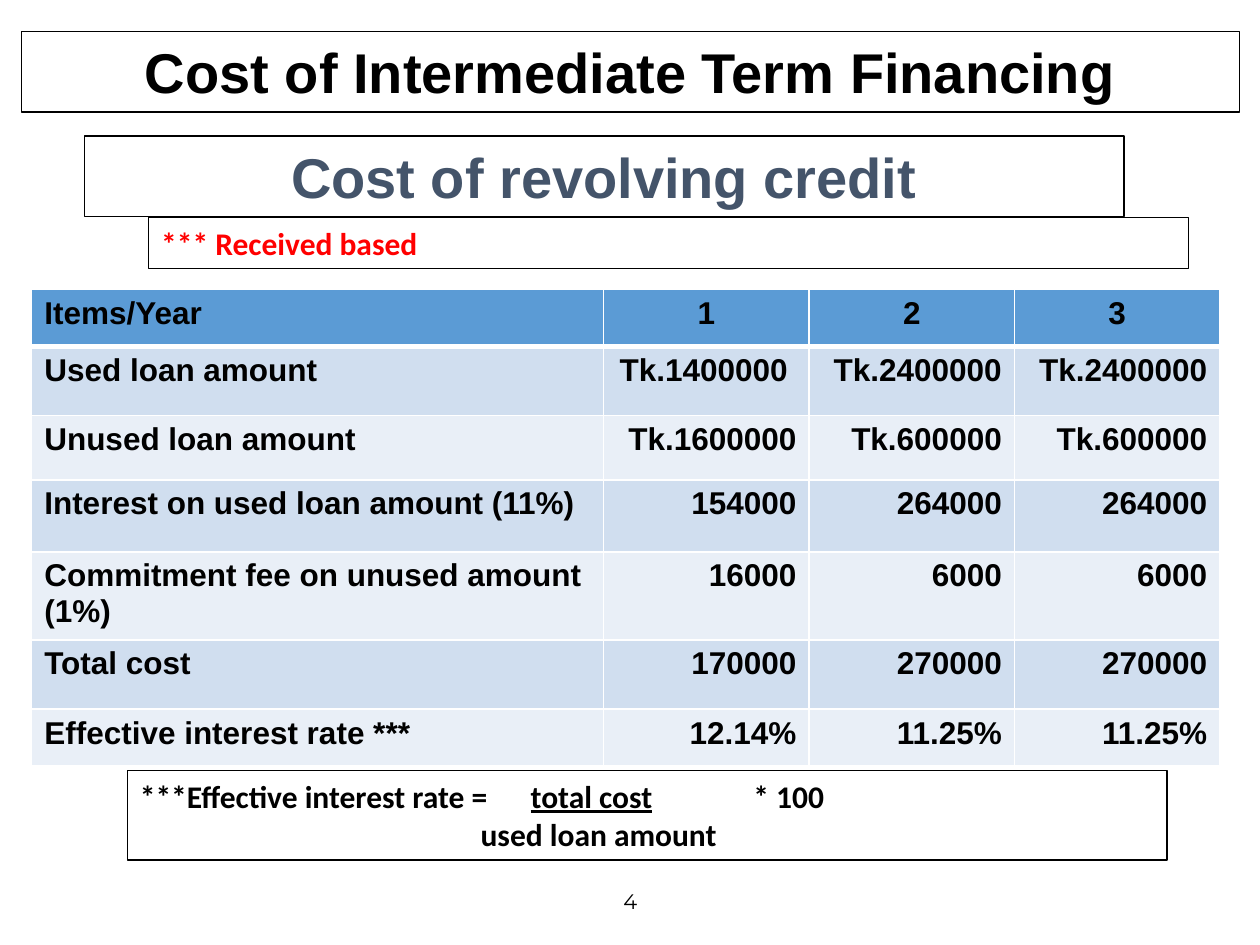
from lxml import etree
from pptx import Presentation
from pptx import util as u
from pptx.dml.color import RGBColor
from pptx.enum import shapes, text
from pptx.oxml.ns import qn

COLORS = {"ink": "000000", "slate": "44546A", "red": "FF0000", "white": "FFFFFF",
          "header": "5B9BD5", "band_dark": "D0DEEF", "band_light": "E9EFF7"}
LEFT, CENTER, RIGHT = text.PP_ALIGN.LEFT, text.PP_ALIGN.CENTER, text.PP_ALIGN.RIGHT

# Content; boxes are left, top, width, height in cm
TITLE = ("Cost of Intermediate Term Financing", (0.43, 0.63, 24.56, 1.63))
SUBTITLE = ("Cost of revolving credit", (1.7, 2.74, 20.96, 1.63))
BASIS = ("*** Received based", (3, 4.39, 20.96, 1.02))
FORMULA_BOX = (2.57, 15.54, 20.96, 1.8)
# Each line: tab stops in cm, then (text, underlined) runs
FORMULA = [
    ([7.88, 12.37], [("***Effective interest rate =\t", False),
                     ("total cost", True), ("\t* 100", False)]),
    ([6.87], [("\tused loan amount", False)]),
]
PAGE_NUMBER = ("4", (8.41, 17.65, 8.59, 1.02))

TABLE_LEFT, TABLE_TOP = 0.64, 5.84
COL_WIDTHS = [11.53, 4.14, 4.14, 4.14]
ROW_HEIGHTS = [1.14, 1.4, 1.3, 1.45, 1.77, 1.4, 1.14]
ROWS = [
    ("Items/Year", "1", "2", "3"),
    ("Used loan amount", "Tk.1400000 ", "Tk.2400000", "Tk.2400000"),
    ("Unused loan amount", "Tk.1600000", "Tk.600000", "Tk.600000"),
    ("Interest on used loan amount (11%)", "154000", "264000", "264000"),
    ("Commitment fee on unused amount (1%)", "16000", "6000", "6000"),
    ("Total cost", "170000", "270000", "270000"),
    ("Effective interest rate ***", "12.14%", "11.25%", "11.25%"),
]


def rgb(name):
    return RGBColor.from_string(COLORS[name])


def style(p, size, font="Arial", color="ink", align=LEFT, bold=True):
    p.alignment = align
    p.font.size, p.font.name, p.font.bold = u.Pt(size), font, bold
    p.font.color.rgb = rgb(color)


def place(sp, box):
    sp.left, sp.top, sp.width, sp.height = map(u.Cm, box)


def outline(sp):
    sp.fill.background()
    sp.line.color.rgb = rgb("ink")
    sp.line.width = u.Pt(0.75)


def framed_box(s, box):
    sp = s.shapes.add_shape(shapes.MSO_SHAPE.RECTANGLE, *map(u.Cm, box))
    sp.shadow.inherit = False
    outline(sp)
    tf = sp.text_frame
    tf.word_wrap = True
    tf.vertical_anchor = text.MSO_ANCHOR.TOP
    return tf


def add_tabs(p, stops):
    tabs = etree.SubElement(p._p.get_or_add_pPr(), qn("a:tabLst"))
    for stop in stops:
        etree.SubElement(tabs, qn("a:tab"), pos=str(u.Cm(stop)), algn="l")


def cell_borders(cell, top, bottom):
    tc_pr = cell._tc.get_or_add_tcPr()
    for side, width in (("L", 1), ("R", 1), ("T", top), ("B", bottom)):
        ln = etree.SubElement(tc_pr, qn(f"a:ln{side}"), w=str(u.Pt(width)))
        fill = etree.SubElement(ln, qn("a:solidFill"))
        etree.SubElement(fill, qn("a:srgbClr"), val=COLORS["white"])


def add_cost_table(s):
    frame = s.shapes.add_table(
        len(ROWS), len(COL_WIDTHS), u.Cm(TABLE_LEFT), u.Cm(TABLE_TOP),
        u.Cm(sum(COL_WIDTHS)), u.Cm(sum(ROW_HEIGHTS)))
    table = frame.table
    for col, width in zip(table.columns, COL_WIDTHS):
        col.width = u.Cm(width)
    for i, (row, height) in enumerate(zip(ROWS, ROW_HEIGHTS)):
        table.rows[i].height = u.Cm(height)
        band = "header" if i == 0 else ("band_light", "band_dark")[i % 2]
        for j, value in enumerate(row):
            cell = table.cell(i, j)
            cell_borders(cell, 3 if i == 1 else 1, 3 if i == 0 else 1)
            cell.fill.solid()
            cell.fill.fore_color.rgb = rgb(band)
            cell.text = value
            align = LEFT if j == 0 else CENTER if i == 0 else RIGHT
            style(cell.text_frame.paragraphs[0], 18, align=align)


def main():
    prs = Presentation()
    prs.slide_width, prs.slide_height = u.Cm(25.4), u.Cm(19.05)
    s = prs.slides.add_slide(prs.slide_layouts[5])

    # Title
    title = s.shapes.title
    place(title, TITLE[1])
    outline(title)
    tf = title.text_frame
    tf.text = TITLE[0]
    tf.auto_size = text.MSO_AUTO_SIZE.NONE
    tf.vertical_anchor = text.MSO_ANCHOR.TOP
    style(tf.paragraphs[0], 32, align=CENTER)

    # Cost table
    add_cost_table(s)

    # Subtitle and basis note
    for (words, box), look in (
            (SUBTITLE, dict(size=32, color="slate", align=CENTER)),
            (BASIS, dict(size=18, font="Calibri", color="red"))):
        tf = framed_box(s, box)
        tf.text = words
        style(tf.paragraphs[0], **look)

    # Rate formula
    tf = framed_box(s, FORMULA_BOX)
    for i, (stops, runs) in enumerate(FORMULA):
        p = tf.add_paragraph() if i else tf.paragraphs[0]
        add_tabs(p, stops)
        style(p, 18, "Calibri")
        for words, underlined in runs:
            r = p.add_run()
            r.text = words
            if underlined:
                r.font.underline = True

    # Page number
    tf = s.shapes.add_textbox(*map(u.Cm, PAGE_NUMBER[1])).text_frame
    tf.word_wrap = True
    tf.vertical_anchor = text.MSO_ANCHOR.MIDDLE
    tf.text = PAGE_NUMBER[0]
    style(tf.paragraphs[0], 12, "Montserrat", align=CENTER, bold=False)

    prs.save("out.pptx")


if __name__ == "__main__":
    main()
